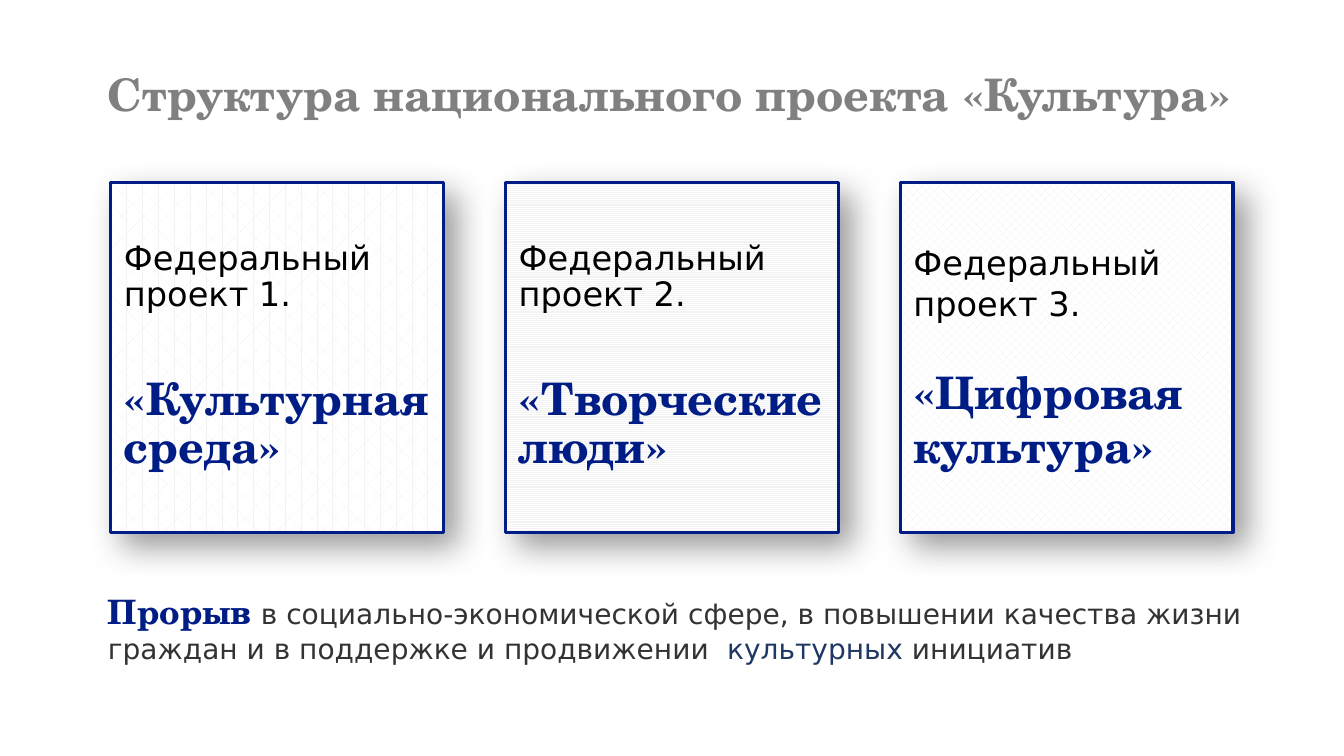
from dataclasses import dataclass

from lxml.etree import SubElement
from pptx import Presentation
from pptx.dml.color import RGBColor
from pptx.enum.dml import MSO_PATTERN as Pattern
from pptx.enum.shapes import MSO_SHAPE as Shape
from pptx.enum.text import MSO_ANCHOR as Anchor, MSO_AUTO_SIZE as AutoSize, PP_ALIGN as Align
from pptx.oxml.ns import qn
from pptx.util import Inches, Pt

SERIF, SANS = "TeX Gyre Schola", "DejaVu Sans"
NAVY = RGBColor(0x00, 0x1C, 0x85)
BLUE = RGBColor(0x20, 0x38, 0x64)
GRAY = RGBColor(0x80, 0x80, 0x80)
DARK = RGBColor(0x33, 0x33, 0x33)
PALE = RGBColor(0xF2, 0xF2, 0xF2)
BLACK = RGBColor(0x00, 0x00, 0x00)
WHITE = RGBColor(0xFF, 0xFF, 0xFF)

CARD_LEFT, CARD_TOP, CARD_STEP = 1.1, 1.81, 3.915
CARD_WIDTH, CARD_HEIGHT, CARD_INSET = 3.3, 3.47, 0.13


@dataclass
class Card:
    label: str
    name: str
    pattern: Pattern
    line_spacing: float
    gap: int


CARDS = [
    Card("Федеральный проект 1.", "«Культурная среда»", Pattern.DIVOT, 0.9, 45),
    Card("Федеральный\nпроект 2.", "«Творческие люди»", Pattern.LIGHT_HORIZONTAL, 0.9, 45),
    Card("Федеральный\nпроект 3.", "«Цифровая культура»", Pattern.WEAVE, 1.0, 30),
]


def write(p, text: str, *, size: int, color: RGBColor, font: str = SANS, bold: bool = False) -> None:
    """Append text to a paragraph, turning newlines into line breaks."""
    for i, line in enumerate(text.split("\n")):
        if i:
            p.add_line_break()
        r = p.add_run()
        r.text = line
        r.font.name, r.font.size, r.font.bold = font, Pt(size), bold
        r.font.color.rgb = color


def add_shadow(sp) -> None:
    """Give a shape a soft shadow falling to the lower right."""
    sp.shadow.inherit = False
    effects = sp._element.spPr.find(qn("a:effectLst"))
    shadow = SubElement(effects, qn("a:outerShdw"), blurRad=str(Pt(24)), dist=str(Pt(12)),
                        dir=str(45 * 60000), algn="tl", rotWithShape="0")
    color = SubElement(shadow, qn("a:srgbClr"), val=str(BLACK))
    SubElement(color, qn("a:alpha"), val="40000")


def add_card(shapes, card: Card, left: float) -> None:
    sp = shapes.add_shape(Shape.RECTANGLE, Inches(left), Inches(CARD_TOP),
                          Inches(CARD_WIDTH), Inches(CARD_HEIGHT))
    sp.fill.patterned()
    sp.fill.pattern = card.pattern
    sp.fill.fore_color.rgb, sp.fill.back_color.rgb = PALE, WHITE
    sp.line.color.rgb, sp.line.width = NAVY, Pt(2.25)
    add_shadow(sp)

    tf = sp.text_frame
    tf.word_wrap, tf.vertical_anchor = True, Anchor.MIDDLE
    tf.margin_left = tf.margin_right = tf.margin_top = tf.margin_bottom = Inches(CARD_INSET)
    label, name = tf.paragraphs[0], tf.add_paragraph()
    for p in (label, name):
        p.alignment, p.line_spacing = Align.LEFT, card.line_spacing
    label.space_after = Pt(card.gap)
    write(label, card.label, size=24, color=BLACK)
    write(name, card.name, size=32, color=NAVY, font=SERIF, bold=True)


def place_text(sp, left: float, top: float, width: float, height: float):
    """Position a placeholder and return its plain, left-aligned paragraph."""
    sp.left, sp.top, sp.width, sp.height = map(Inches, (left, top, width, height))
    tf = sp.text_frame
    tf.word_wrap, tf.auto_size, tf.vertical_anchor = True, AutoSize.SHAPE_TO_FIT_TEXT, Anchor.TOP
    p = tf.paragraphs[0]
    p.alignment, p.space_before = Align.LEFT, Pt(0)
    pPr = p._p.get_or_add_pPr()
    pPr.set("marL", "0")
    pPr.set("indent", "0")
    SubElement(pPr, qn("a:buNone"))
    return p


def main() -> None:
    prs = Presentation()
    prs.slide_width, prs.slide_height = Inches(13.33), Inches(7.5)
    s = prs.slides.add_slide(prs.slide_layouts[1])

    title = place_text(s.shapes.title, 0.97, 0.61, 11.69, 0.64)
    write(title, "Структура национального проекта «Культура»",
          size=32, color=GRAY, font=SERIF, bold=True)

    group = s.shapes.add_group_shape()
    for i, card in enumerate(CARDS):
        add_card(group.shapes, card, CARD_LEFT + i * CARD_STEP)

    goal = place_text(s.placeholders[1], 0.97, 5.81, 11.99, 0.84)
    write(goal, "Прорыв ", size=24, color=NAVY, font=SERIF, bold=True)
    write(goal, "в социально-экономической сфере, в повышении качества жизни "
                "граждан и в поддержке и продвижении  ", size=20, color=DARK)
    write(goal, "культурных", size=20, color=BLUE)
    write(goal, " инициатив", size=20, color=DARK)

    prs.save("out.pptx")


if __name__ == "__main__":
    main()
